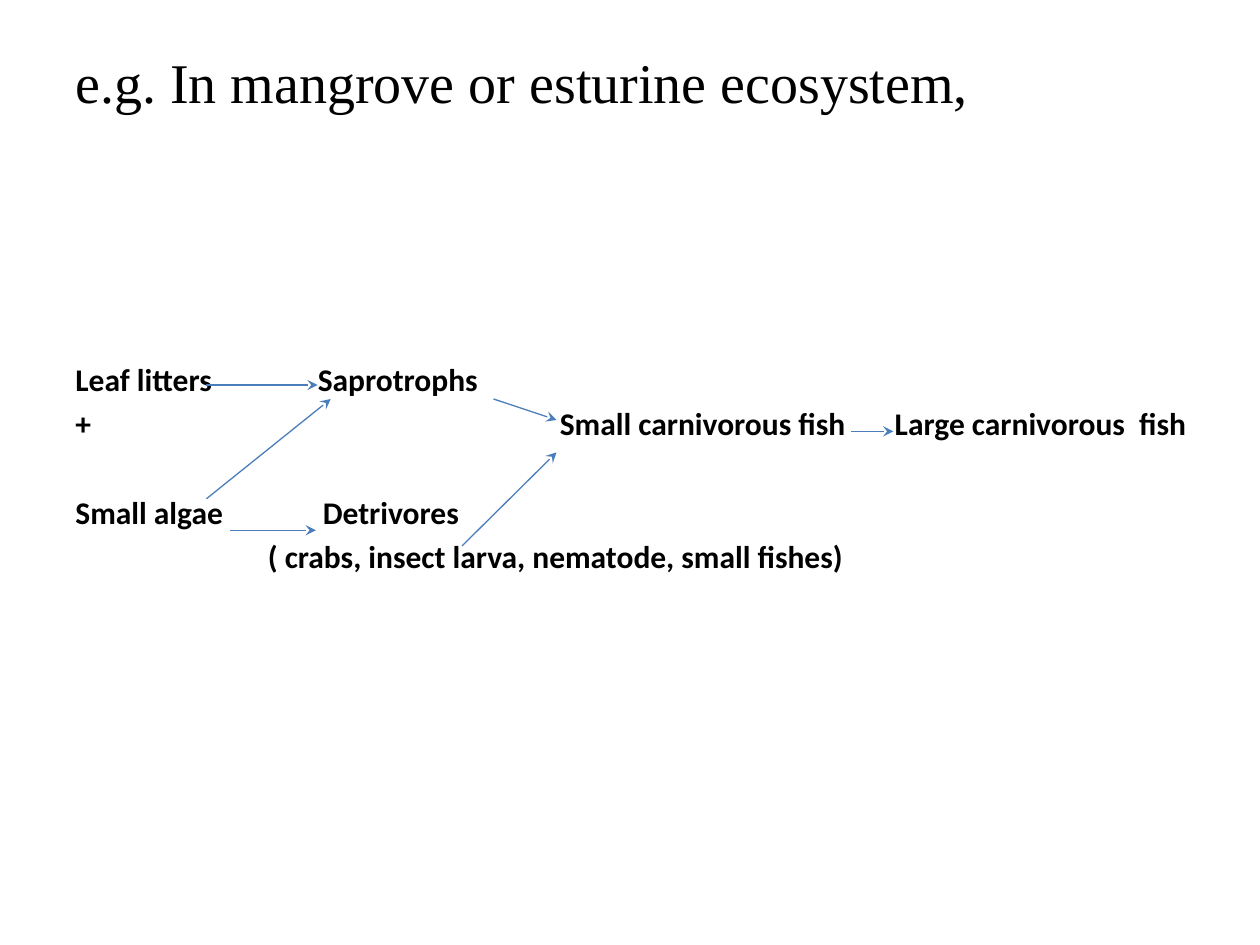
from pptx import Presentation
from pptx.util import Pt
from pptx.dml.color import RGBColor as RGB
from pptx.enum.shapes import MSO_CONNECTOR as Conn
from pptx.oxml.ns import qn
from lxml.etree import SubElement as Sub


def paint(color, code):
    color.rgb = RGB.from_string(code)


deck = Presentation()
deck.slide_width, deck.slide_height = Pt(720), Pt(540)
slide = deck.slides.add_slide(deck.slide_layouts[6])

# Text, gap above, font, size, bold, tab stops
lines = [
    ("e.g. In mangrove or esturine ecosystem,", 0, "Times New Roman", 32, False, []),
    ("Leaf litters\tSaprotrophs", 140, "Calibri", 18, True, [138.5]),
    ("+\tSmall carnivorous fish\tLarge carnivorous  fish", 3.6, "Calibri", 18, True,
     [276.8, 468.2]),
    ("Small algae\tDetrivores", 29.2, "Calibri", 18, True, [141.4]),
    ("\t( crabs, insect larva, nematode, small fishes)", 3.6, "Calibri", 18, True, [110]),
]
box = slide.shapes.add_textbox(Pt(36), Pt(23.8), Pt(666), Pt(458.6))
frame = box.text_frame
frame.word_wrap = True
for i, (text, gap, face, size, bold, stops) in enumerate(lines):
    para = frame.add_paragraph() if i else frame.paragraphs[0]
    para.text = text
    para.space_before = Pt(gap)
    if stops:
        tabs = Sub(para._p.get_or_add_pPr(), qn("a:tabLst"))
        for stop in stops:
            Sub(tabs, qn("a:tab"), pos=str(Pt(stop)), algn="l")
    font = para.font
    font.name, font.size, font.bold = face, Pt(size), bold
    paint(font.color, "000000")

# Feeding links: from x, y to x, y
links = [
    (118, 285, 189, 228),
    (282, 228, 318, 240),
    (264, 312, 318, 258.5),
    (486.5, 246.5, 510.5, 246.5),
    (118, 220, 181.5, 220),
    (131.5, 303, 180.5, 303),
]
for ends in links:
    link = slide.shapes.add_connector(Conn.STRAIGHT, *map(Pt, ends))
    link.line.width = Pt(0.75)
    paint(link.line.color, "4A7DBA")
    Sub(link.line._get_or_add_ln(), qn("a:tailEnd"), type="stealth")
    Sub(link._element.spPr, qn("a:effectLst"))

deck.save("out.pptx")
